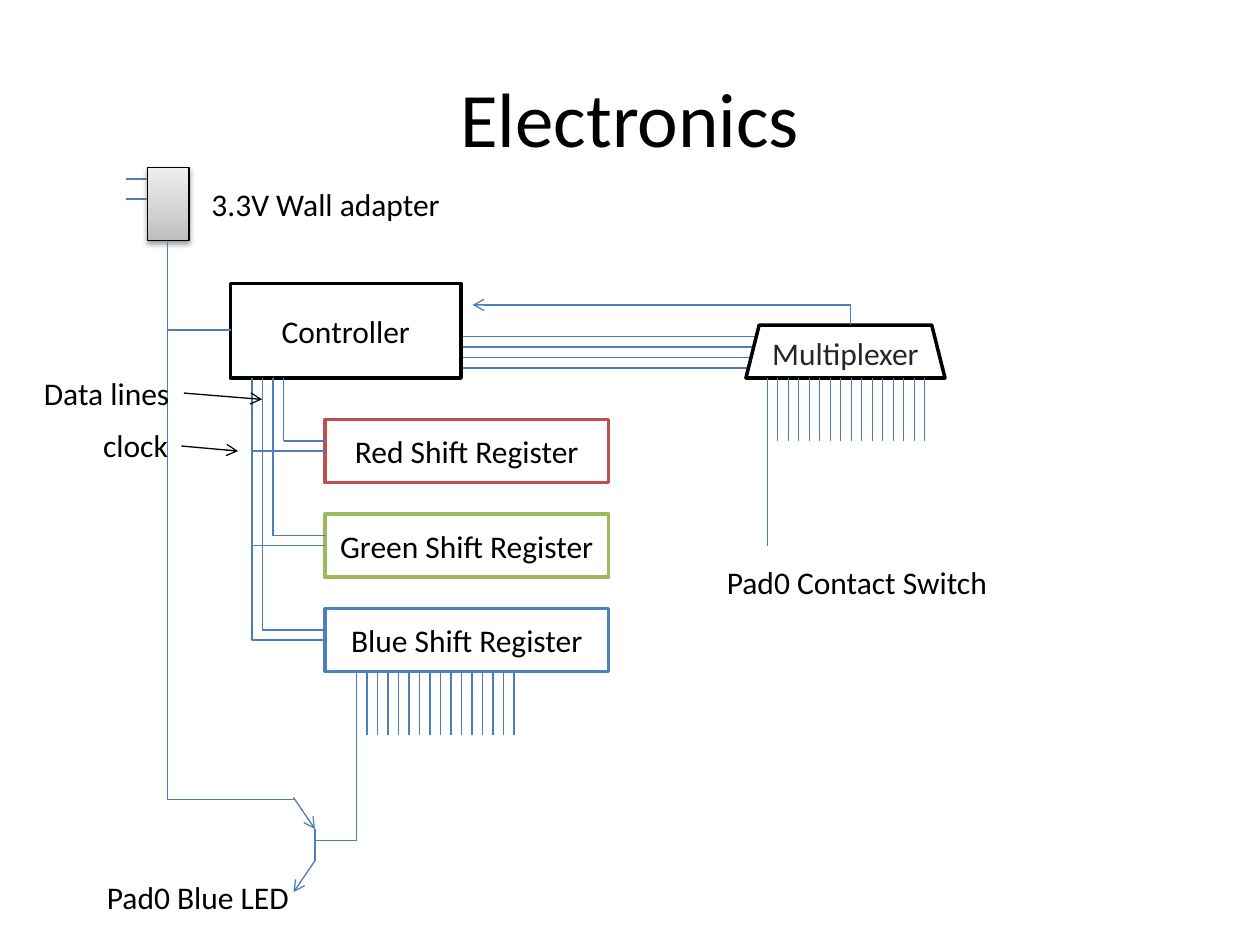
from copy import deepcopy
from lxml.etree import SubElement
from pptx import Presentation
from pptx.dml.color import RGBColor
from pptx.enum.shapes import MSO_CONNECTOR, MSO_SHAPE
from pptx.enum.text import MSO_ANCHOR, MSO_AUTO_SIZE, PP_ALIGN
from pptx.oxml.ns import qn
from pptx.util import Inches, Pt

HUES = {"black": "000000", "white": "FFFFFF", "wire": "4B7EBC", "red": "C0504D",
        "green": "9BBB59", "blue": "4F81BD", "dark": "262626"}
HUES = {name: RGBColor.from_string(code) for name, code in HUES.items()}
STEP = 1 / 12

deck = Presentation()
deck.slide_width, deck.slide_height = Inches(10), Inches(7.5)
slide = deck.slides.add_slide(deck.slide_layouts[5])
shapes = slide.shapes


def write(frame, text, size, hue="black"):
    run = frame.paragraphs[0].add_run()
    run.text = text
    run.font.name, run.font.size = "Calibri", Pt(size)
    run.font.color.rgb = HUES[hue]


def wire(x1, y1, x2, y2, hue="wire", arrow=False, kind=MSO_CONNECTOR.STRAIGHT):
    line = shapes.add_connector(kind, Inches(x1), Inches(y1), Inches(x2), Inches(y2))
    line.line.color.rgb, line.line.width = HUES[hue], Pt(0.75)
    props = line._element.spPr
    if arrow:
        SubElement(props.find(qn("a:ln")), qn("a:tailEnd"), type="arrow")
    SubElement(props, qn("a:effectLst"))
    return line


# Title
title = shapes.title
title.left, title.top, title.width, title.height = map(Inches, (0.5, 0.3, 9, 1.25))
title.text_frame.vertical_anchor = MSO_ANCHOR.MIDDLE
title.text_frame.paragraphs[0].alignment = PP_ALIGN.CENTER
write(title.text_frame, "Electronics", 44)

# Wall adapter with a grey gradient, a soft shadow and two prongs
plug = shapes.add_shape(MSO_SHAPE.RECTANGLE, Inches(1.17), Inches(1.33), Inches(0.33), Inches(0.58))
plug.line.color.rgb, plug.line.width = HUES["black"], Pt(0.75)
plug.fill.gradient()
plug.fill.gradient_angle = 90
stops = plug._element.spPr.find(qn("a:gradFill")).find(qn("a:gsLst"))
stops.insert(1, deepcopy(stops[0]))
greys = [(0, "BDBDBD"), (0.35, "D1D1D1"), (1, "EEEEEE")]
for stop, (place, grey) in zip(plug.fill.gradient_stops, greys):
    stop.position, stop.color.rgb = place, RGBColor.from_string(grey)
plug.shadow.inherit = False
shade = SubElement(plug._element.spPr.find(qn("a:effectLst")), qn("a:outerShdw"),
                   blurRad="40000", dist="20000", dir="5400000", rotWithShape="0")
tint = SubElement(shade, qn("a:srgbClr"), val="000000")
SubElement(tint, qn("a:alpha"), val="38000")
for y in (1.42, 1.58):
    wire(1, y, 1.17, y)

# Address lines lie behind the multiplexer
for n in range(4):
    y = 2.67 + n * STEP
    wire(3.67, y, 6.08, y)

# Chips
chips = [
    ("Controller", 1.83, 2.25, 1.83, 0.75, "black", "black", MSO_SHAPE.RECTANGLE),
    ("Red Shift Register", 2.58, 3.33, 2.25, 0.5, "red", "black", MSO_SHAPE.RECTANGLE),
    ("Green Shift Register", 2.58, 4.08, 2.25, 0.5, "green", "black", MSO_SHAPE.RECTANGLE),
    ("Blue Shift Register", 2.58, 4.83, 2.25, 0.5, "blue", "black", MSO_SHAPE.RECTANGLE),
    ("Multiplexer", 5.92, 2.58, 1.58, 0.42, "black", "dark", MSO_SHAPE.TRAPEZOID),
]
for text, x, y, w, h, edge, ink, form in chips:
    chip = shapes.add_shape(form, Inches(x), Inches(y), Inches(w), Inches(h))
    chip.shadow.inherit = False
    chip.fill.solid()
    chip.fill.fore_color.rgb = HUES["white"]
    chip.line.color.rgb, chip.line.width = HUES[edge], Pt(2)
    frame = chip.text_frame
    frame.vertical_anchor = MSO_ANCHOR.MIDDLE
    frame.paragraphs[0].alignment = PP_ALIGN.CENTER
    write(frame, text, 18, ink)

# Elbows that leave downwards: power to the board, clock, power to the LED
elbows = [(1.33, 1.92, 1.83, 2.62, None), (2, 3, 2.58, 5.08, None),
          (1.33, 1.92, 2.33, 6.33, 100300)]
for x1, y1, x2, y2, bend in elbows:
    midx, midy = (x1 + x2) / 2, (y1 + y2) / 2
    across, down = (y2 - y1) / 2, (x2 - x1) / 2
    elbow = wire(midx + across, midy - down, midx - across, midy + down,
                 kind=MSO_CONNECTOR.ELBOW)
    props = elbow._element.spPr
    props.find(qn("a:xfrm")).set("rot", "16200000")
    form = props.find(qn("a:prstGeom"))
    if bend:
        SubElement(form.find(qn("a:avLst")), qn("a:gd"), name="adj1", fmla=f"val {bend}")
    else:
        form.set("prst", "bentConnector2")

# Clock branches and data lines of the registers
for y in (3.58, 4.33):
    wire(2.58, y, 2, y)
for n, y in enumerate((5, 4.25, 3.5), 1):
    x = 2 + n * STEP
    wire(x, 3, x, y)
    wire(x, y, 2.58, y)

# Pins: one long, then fifteen short
for x, y, long in ((2.83, 5.33, 1.34), (6.09, 3, 1.33)):
    wire(x, y, x, y + long)
    for n in range(1, 16):
        wire(x + n * STEP, y, x + n * STEP, y + 0.5)

# Transistor at the LED
wire(2.33, 6.33, 2.5, 6.58, arrow=True)
wire(2.5, 6.83, 2.5, 6.58)
wire(2.5, 6.83, 2.33, 7.08, arrow=True)
wire(2.83, 6.67, 2.5, 6.67)

# Multiplexer output back to the board
wire(6.75, 2.42, 3.75, 2.42, arrow=True)
wire(6.75, 2.42, 6.75, 2.58)

# Labels and their pointers
labels = [("3.3V Wall adapter", 1.58, 1.42, 2.04), ("clock", 0.72, 3.33, 0.72),
          ("Data lines", 0.25, 2.92, 1.21), ("Pad0 Blue LED", 0.75, 6.92, 1.66),
          ("Pad0 Contact Switch", 5.67, 4.42, 2.29)]
for text, x, y, w in labels:
    frame = shapes.add_textbox(Inches(x), Inches(y), Inches(w), Inches(0.4)).text_frame
    frame.word_wrap = False
    frame.auto_size = MSO_AUTO_SIZE.SHAPE_TO_FIT_TEXT
    write(frame, text, 18)
wire(1.46, 3.12, 2.08, 3.17, "black", arrow=True)
wire(1.44, 3.54, 1.89, 3.58, "black", arrow=True)

deck.save("out.pptx")
